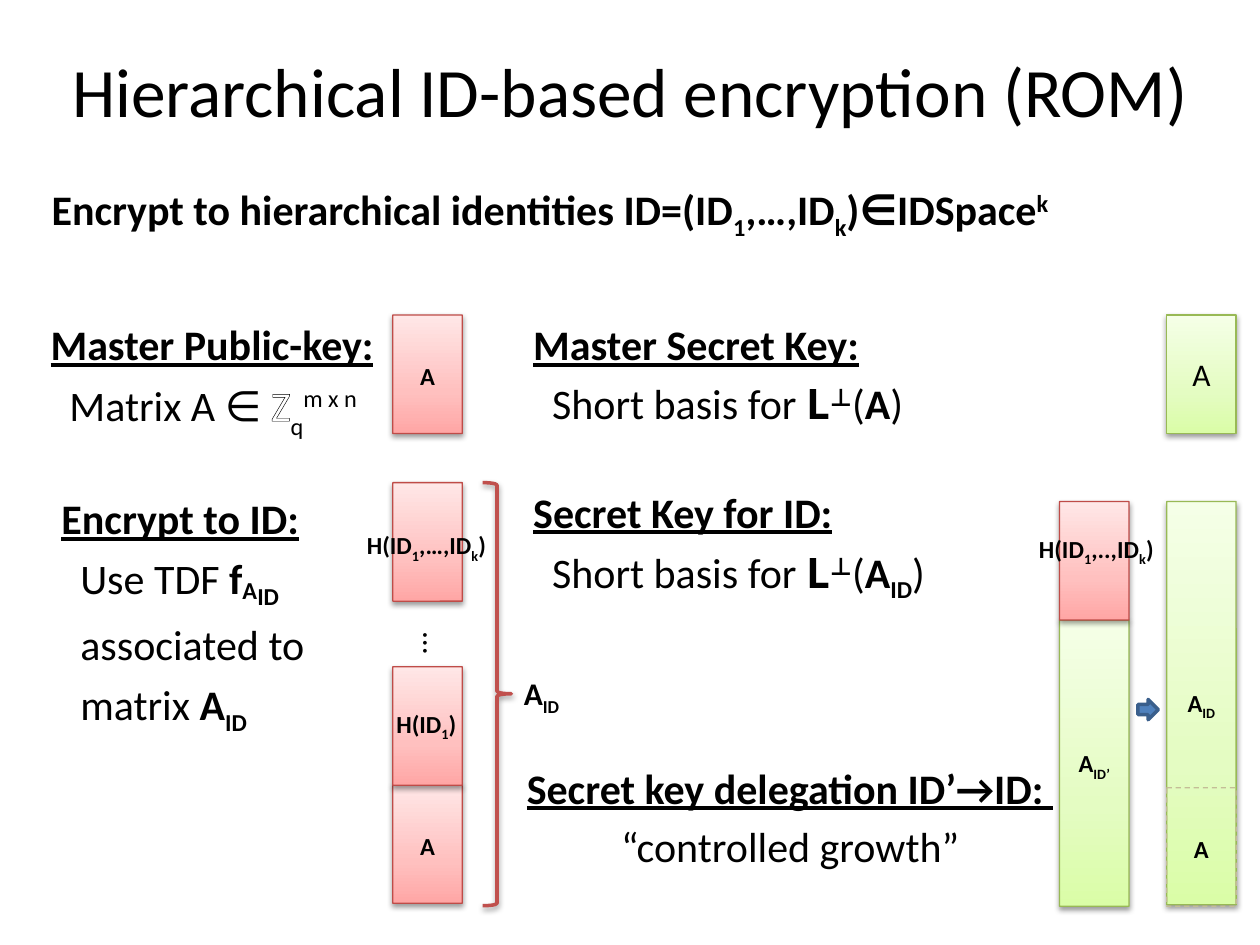
from copy import deepcopy
from dataclasses import dataclass
from typing import NamedTuple

from lxml import etree
from pptx import Presentation
from pptx.dml.color import RGBColor
from pptx.enum import dml, shapes, text
from pptx.oxml import ns
from pptx.util import Cm, Pt

COLORS = {
    "text": "000000", "white": "FFFFFF", "brace": "C0504D", "arrow": "4F81BD",
    "arrow_line": "3A5F8C", "dash": "C4BD97", "red_line": "BF4C48", "green_line": "98B955",
}
GRADIENTS = {
    "red": ("FFA6A5", "FFC0BF", "FFE7E7"),
    "green": ("DAFDA7", "E4FCC2", "F5FFE7"),
}
STOPS = (0, 0.35, 1)
KEY_WIDTH, KEY_HEIGHT = 1.4, 2.39
PUBLIC_X, DELEGATED_X, SECRET_X = 7.92, 21.36, 23.52
MASTER_Y, DELEGATION_Y = 6.35, 10.11
LINE_SPACING = 1.17


class Piece(NamedTuple):
    text: str
    bold: bool = True
    baseline: int = 0
    underline: bool = False
    font: str = "Calibri"
    outlined: bool = False


class Line(NamedTuple):
    pieces: tuple[Piece, ...]
    indent: float = 0


@dataclass
class KeyBox:
    left: float
    top: float
    color: str
    pieces: tuple[Piece, ...] = ()
    height: float = KEY_HEIGHT
    size: float = 14
    rounded: bool = True


@dataclass
class Label:
    left: float
    top: float
    width: float
    height: float
    pieces: tuple[Piece, ...]
    size: float = 14
    centered: bool = True
    rotation: float = 0


@dataclass
class Passage:
    left: float
    top: float
    width: float
    height: float
    lines: tuple[Line, ...]
    wrap: bool = True


def plain(words: str) -> Piece:
    return Piece(words, bold=False)


def sub(words: str) -> Piece:
    return Piece(words, baseline=-25)


def heading(words: str) -> Line:
    return Line((Piece(words, underline=True),))


def hash_of(*pieces: Piece) -> tuple[Piece, ...]:
    return (Piece("H(ID"), sub("1"), *pieces, Piece(")"))


def rgb(name: str) -> RGBColor:
    return RGBColor.from_string(COLORS[name])


def write(paragraph, pieces: tuple[Piece, ...], size: float) -> None:
    for piece in pieces:
        run = paragraph.add_run()
        run.text = piece.text
        font = run.font
        font.name, font.size = piece.font, Pt(size)
        font.bold, font.underline = piece.bold, piece.underline
        font.color.rgb = rgb("white" if piece.outlined else "text")
        properties = run._r.get_or_add_rPr()
        if piece.baseline:
            properties.set("baseline", str(piece.baseline * 1000))
        if piece.outlined:
            outline = etree.Element(ns.qn("a:ln"), w=str(Pt(0.75)))
            fill = etree.SubElement(outline, ns.qn("a:solidFill"))
            etree.SubElement(fill, ns.qn("a:srgbClr"), val=COLORS["text"])
            properties.insert(0, outline)


def add_shadow(shape) -> None:
    shape.shadow.inherit = False
    effects = shape._element.spPr.find(ns.qn("a:effectLst"))
    shadow = etree.SubElement(effects, ns.qn("a:outerShdw"), blurRad="40000",
                              dist="20000", dir="5400000", rotWithShape="0")
    color = etree.SubElement(shadow, ns.qn("a:srgbClr"), val=COLORS["text"])
    etree.SubElement(color, ns.qn("a:alpha"), val="38000")


def fill_gradient(shape, colors: tuple[str, ...]) -> None:
    shape.fill.gradient()
    shape.fill.gradient_angle = 90
    stop_list = shape._element.spPr.find(".//" + ns.qn("a:gsLst"))
    stop_list.append(deepcopy(stop_list[0]))
    for stop, position, color in zip(shape.fill.gradient_stops, STOPS, colors):
        stop.position = position
        stop.color.rgb = RGBColor.from_string(color)


def add_key_box(slide, box: KeyBox) -> None:
    kind = shapes.MSO_SHAPE.ROUNDED_RECTANGLE if box.rounded else shapes.MSO_SHAPE.RECTANGLE
    shape = slide.shapes.add_shape(kind, Cm(box.left), Cm(box.top), Cm(KEY_WIDTH), Cm(box.height))
    if box.rounded:
        shape.adjustments[0] = 0.001
    shape.line.width = Pt(0.75)
    if box.color in GRADIENTS:
        fill_gradient(shape, GRADIENTS[box.color])
        shape.line.color.rgb = rgb(box.color + "_line")
        add_shadow(shape)
    else:
        shape.fill.background()
        shape.line.color.rgb = rgb(box.color)
        shape.line.dash_style = dml.MSO_LINE.DASH
        shape.shadow.inherit = False
    frame = shape.text_frame
    frame.vertical_anchor = text.MSO_ANCHOR.MIDDLE
    if box.rounded:
        frame.margin_left = frame.margin_right = Cm(0.23)
        frame.margin_top, frame.margin_bottom = Cm(0.18), Cm(0.1)
    frame.paragraphs[0].alignment = text.PP_ALIGN.CENTER
    write(frame.paragraphs[0], box.pieces, box.size)


def add_label(slide, label: Label) -> None:
    shape = slide.shapes.add_textbox(Cm(label.left), Cm(label.top), Cm(label.width), Cm(label.height))
    shape.rotation = label.rotation
    shape.text_frame.word_wrap = bool(label.rotation)
    paragraph = shape.text_frame.paragraphs[0]
    if label.centered:
        paragraph.alignment = text.PP_ALIGN.CENTER
    write(paragraph, label.pieces, label.size)


def add_passage(slide, passage: Passage) -> None:
    shape = slide.shapes.add_textbox(
        Cm(passage.left), Cm(passage.top), Cm(passage.width), Cm(passage.height))
    frame = shape.text_frame
    frame.word_wrap = passage.wrap
    if passage.wrap:
        frame.margin_left = frame.margin_right = Cm(0.23)
        frame.margin_top = frame.margin_bottom = Cm(0.1)
    for index, line in enumerate(passage.lines):
        paragraph = frame.add_paragraph() if index else frame.paragraphs[0]
        paragraph.line_spacing = LINE_SPACING
        if line.indent:
            paragraph._p.get_or_add_pPr().set("marL", str(Cm(line.indent)))
        write(paragraph, line.pieces, 24)


def add_title(slide, words: str) -> None:
    title = slide.shapes.title
    title.left, title.top, title.width, title.height = Cm(0), Cm(0.2), Cm(25.4), Cm(2.95)
    title.text_frame.vertical_anchor = text.MSO_ANCHOR.MIDDLE
    paragraph = title.text_frame.paragraphs[0]
    paragraph.alignment = text.PP_ALIGN.CENTER
    paragraph.line_spacing = LINE_SPACING
    write(paragraph, (plain(words),), 39.6)


def add_brace_and_arrow(slide) -> None:
    brace = slide.shapes.add_shape(
        shapes.MSO_SHAPE.RIGHT_BRACE, Cm(9.73), Cm(9.73), Cm(0.58), Cm(8.53))
    brace.adjustments[0], brace.adjustments[1] = 0.083, 0.499
    brace.fill.background()
    brace.line.color.rgb, brace.line.width = rgb("brace"), Pt(2)
    add_shadow(brace)
    arrow = slide.shapes.add_shape(
        shapes.MSO_SHAPE.RIGHT_ARROW, Cm(22.94), Cm(14.1), Cm(0.41), Cm(0.41))
    arrow.fill.solid()
    arrow.fill.fore_color.rgb = rgb("arrow")
    arrow.line.color.rgb, arrow.line.width = rgb("arrow_line"), Pt(2)
    arrow.shadow.inherit = False


A = Piece("A")
A_ID = (A, sub("ID"))
LATTICE = (plain("Short basis for "), Piece("L", font="Open Sans"),
           Piece("⊥", baseline=30, font="Open Sans"), plain("("))
INDENT = 0.38

KEY_BOXES = (
    KeyBox(SECRET_X, MASTER_Y, "green", (plain("A"),), size=18, rounded=False),
    KeyBox(PUBLIC_X, MASTER_Y, "red", (A,)),
    KeyBox(PUBLIC_X, 15.82, "red", (A,)),
    KeyBox(PUBLIC_X, 13.44, "red"),
    KeyBox(PUBLIC_X, 9.73, "red"),
    KeyBox(SECRET_X, DELEGATION_Y, "green", A_ID, height=8.13),
    KeyBox(DELEGATED_X, DELEGATION_Y + KEY_HEIGHT, "green", (A, sub("ID’")), height=5.77),
    KeyBox(DELEGATED_X, DELEGATION_Y, "red"),
    KeyBox(SECRET_X, 15.88, "dash", (A,)),
)
LABELS = (
    Label(8.43, 12.34, 0.71, 1.02, (plain("…"),), 18, centered=False, rotation=90),
    Label(10.31, 13.46, 1.3, 1.02, A_ID, 18, centered=False),
    Label(7.72, 14.17, 1.75, 0.86, hash_of()),
    Label(20.65, 10.64, 2.9, 0.86, hash_of(Piece(",..,ID"), sub("k"))),
    Label(7.11, 10.57, 2.97, 0.86, hash_of(Piece(",…,ID"), sub("k"))),
)
PASSAGES = (
    Passage(0.79, 3.38, 20.78, 1.37, (Line((
        Piece("Encrypt to hierarchical identities ID=(ID"), sub("1"), Piece(",…,ID"), sub("k"),
        Piece(")∈IDSpace"), Piece("k", baseline=30))),), wrap=False),
    Passage(0.79, 6.15, 7.34, 2.59, (heading("Master Public-key:"), Line((
        plain("Matrix A ∈ "), Piece("Z", False, outlined=True),
        Piece("q", False, -33), Piece("m x n", False, 33)), INDENT))),
    Passage(10.52, 6.15, 8.94, 2.18, (
        heading("Master Secret Key:"), Line((*LATTICE, A, plain(")")), INDENT))),
    Passage(0.99, 9.63, 5.46, 5.05, (
        heading("Encrypt to ID:"),
        Line((plain("Use TDF "), Piece("f"), Piece("A", baseline=-12), sub("ID")), INDENT),
        Line((plain("associated to"),), INDENT),
        Line((plain("matrix "), *A_ID), INDENT)), wrap=False),
    Passage(10.52, 9.53, 10.52, 2.18, (
        heading("Secret Key for ID:"), Line((*LATTICE, *A_ID, plain(")")), INDENT))),
    Passage(10.39, 15.09, 11.51, 2.18, (
        heading("Secret key delegation ID’→ID: "),
        Line((plain("“controlled growth”"),), 5 * INDENT))),
)


def main() -> None:
    presentation = Presentation()
    presentation.slide_width, presentation.slide_height = Cm(25.4), Cm(19.05)
    slide = presentation.slides.add_slide(presentation.slide_layouts[5])
    add_title(slide, "Hierarchical ID-based encryption (ROM)")
    for box in KEY_BOXES:
        add_key_box(slide, box)
    add_brace_and_arrow(slide)
    for label in LABELS:
        add_label(slide, label)
    for passage in PASSAGES:
        add_passage(slide, passage)
    presentation.save("out.pptx")


if __name__ == "__main__":
    main()
